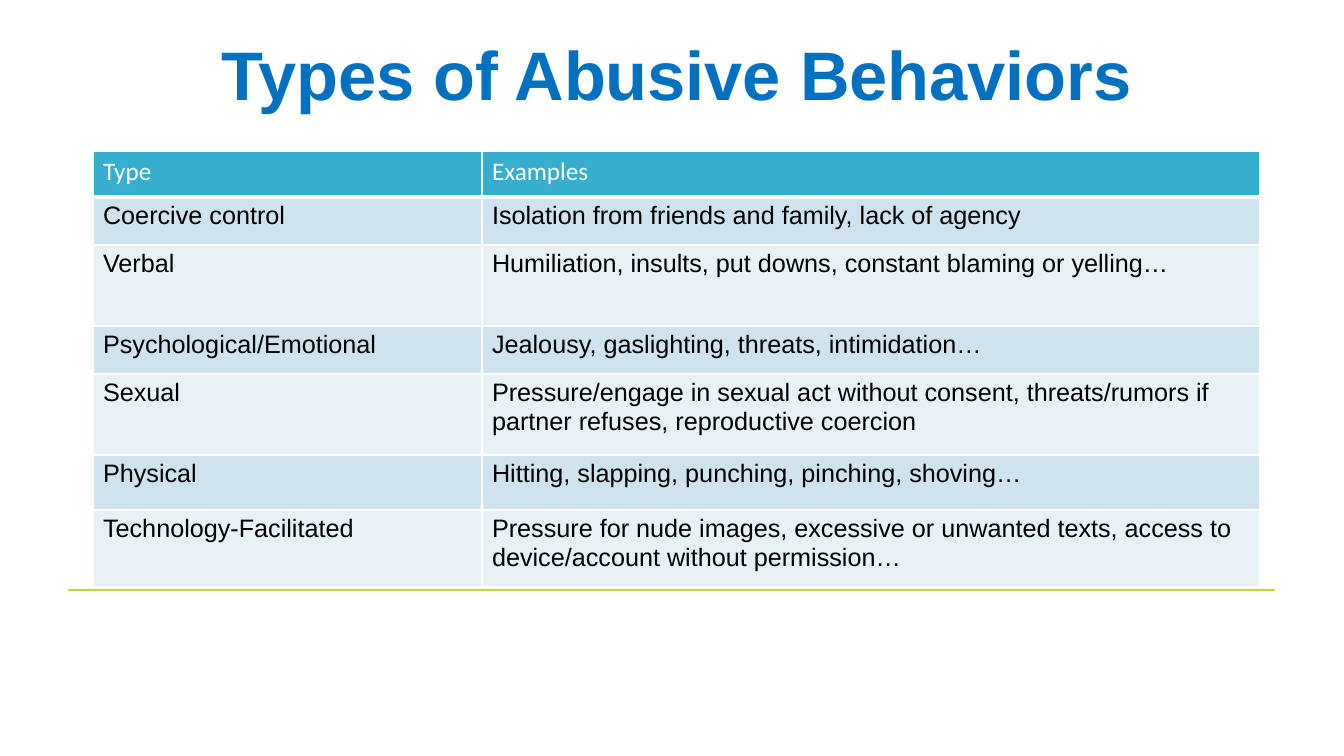
from lxml.etree import SubElement
from pptx import Presentation
from pptx.dml.color import RGBColor
from pptx.enum.shapes import MSO_CONNECTOR
from pptx.enum.text import MSO_ANCHOR, PP_ALIGN
from pptx.oxml.ns import qn
from pptx.util import Emu, Pt

EMU_PER_PX = 914400 / 100.8
SLIDE_SIZE = (1344, 756)
COLORS = {
    "title": "0070C0",
    "header": "36AFCE",
    "band_dark": "CEE3ED",
    "band_light": "E8F2F6",
    "border": "FFFFFF",
    "header_text": "FFFFFF",
    "body_text": "000000",
    "rule": "C1D82E",
}
BEHAVIORS = [
    ("Type", "Examples"),
    ("Coercive control", "Isolation from friends and family, lack of agency"),
    ("Verbal", "Humiliation, insults, put downs, constant blaming or yelling…"),
    ("Psychological/Emotional", "Jealousy, gaslighting, threats, intimidation…"),
    ("Sexual", "Pressure/engage in sexual act without consent, threats/rumors if "
               "partner refuses, reproductive coercion"),
    ("Physical", "Hitting, slapping, punching, pinching, shoving…"),
    ("Technology-Facilitated", "Pressure for nude images, excessive or unwanted texts, "
                               "access to device/account without permission…"),
]
ROW_HEIGHTS = [46, 48, 81, 48, 81, 55, 77]
COLUMN_SHARES = [1, 2]


def px(length):
    return Emu(round(length * EMU_PER_PX))


def color(name):
    return RGBColor.from_string(COLORS[name])


def style_font(paragraph, name, size, color_name, bold=False):
    for run in paragraph.runs:
        run.font.name = name
        run.font.size = Pt(size)
        run.font.bold = bold
        run.font.color.rgb = color(color_name)


def add_rule(slide, left, top, width):
    rule = slide.shapes.add_connector(
        MSO_CONNECTOR.STRAIGHT, px(left), px(top), px(left + width), px(top))
    rule.line.color.rgb = color("rule")
    rule.line.width = Pt(1.5)
    SubElement(rule._element.spPr, qn("a:effectLst"))


def add_title(slide, left, top, width, height):
    title = slide.shapes.add_textbox(px(left), px(top), px(width), px(height))
    text_frame = title.text_frame
    text_frame.word_wrap = True
    text_frame.vertical_anchor = MSO_ANCHOR.MIDDLE
    text_frame.text = "Types of Abusive Behaviors"
    paragraph = text_frame.paragraphs[0]
    paragraph.alignment = PP_ALIGN.CENTER
    paragraph.line_spacing = 0.9
    style_font(paragraph, "Arial", 49, "title", bold=True)


def add_borders(cell, bottom_width):
    """Outline a cell; must run before its fill is set."""
    properties = cell._tc.get_or_add_tcPr()
    for side, width in (("L", 1), ("R", 1), ("T", 1), ("B", bottom_width)):
        line = SubElement(properties, qn(f"a:ln{side}"), w=str(Pt(width)))
        fill = SubElement(line, qn("a:solidFill"))
        SubElement(fill, qn("a:srgbClr"), val=COLORS["border"])


def fill_cell(cell, text, row):
    is_header = row == 0
    add_borders(cell, 3 if is_header else 1)
    cell.fill.solid()
    band = "band_dark" if row % 2 else "band_light"
    cell.fill.fore_color.rgb = color("header" if is_header else band)
    cell.text_frame.text = text
    paragraph = cell.text_frame.paragraphs[0]
    if is_header:
        style_font(paragraph, "Calibri", 18, "header_text")
    else:
        style_font(paragraph, "Arial", 18, "body_text")


def add_behavior_table(slide, left, top, width):
    table = slide.shapes.add_table(
        len(BEHAVIORS), len(COLUMN_SHARES),
        px(left), px(top), px(width), px(sum(ROW_HEIGHTS))).table
    for column, share in zip(table.columns, COLUMN_SHARES):
        column.width = px(width * share / sum(COLUMN_SHARES))
    for row, texts in enumerate(BEHAVIORS):
        table.rows[row].height = px(ROW_HEIGHTS[row])
        for column, text in enumerate(texts):
            fill_cell(table.cell(row, column), text, row)


def main():
    presentation = Presentation()
    presentation.slide_width, presentation.slide_height = map(px, SLIDE_SIZE)
    slide = presentation.slides.add_slide(presentation.slide_layouts[6])
    add_rule(slide, 68, 590, 1207)
    add_title(slide, 93, 30, 1167, 96)
    add_behavior_table(slide, 93, 151, 1167)
    presentation.save("out.pptx")


if __name__ == "__main__":
    main()
